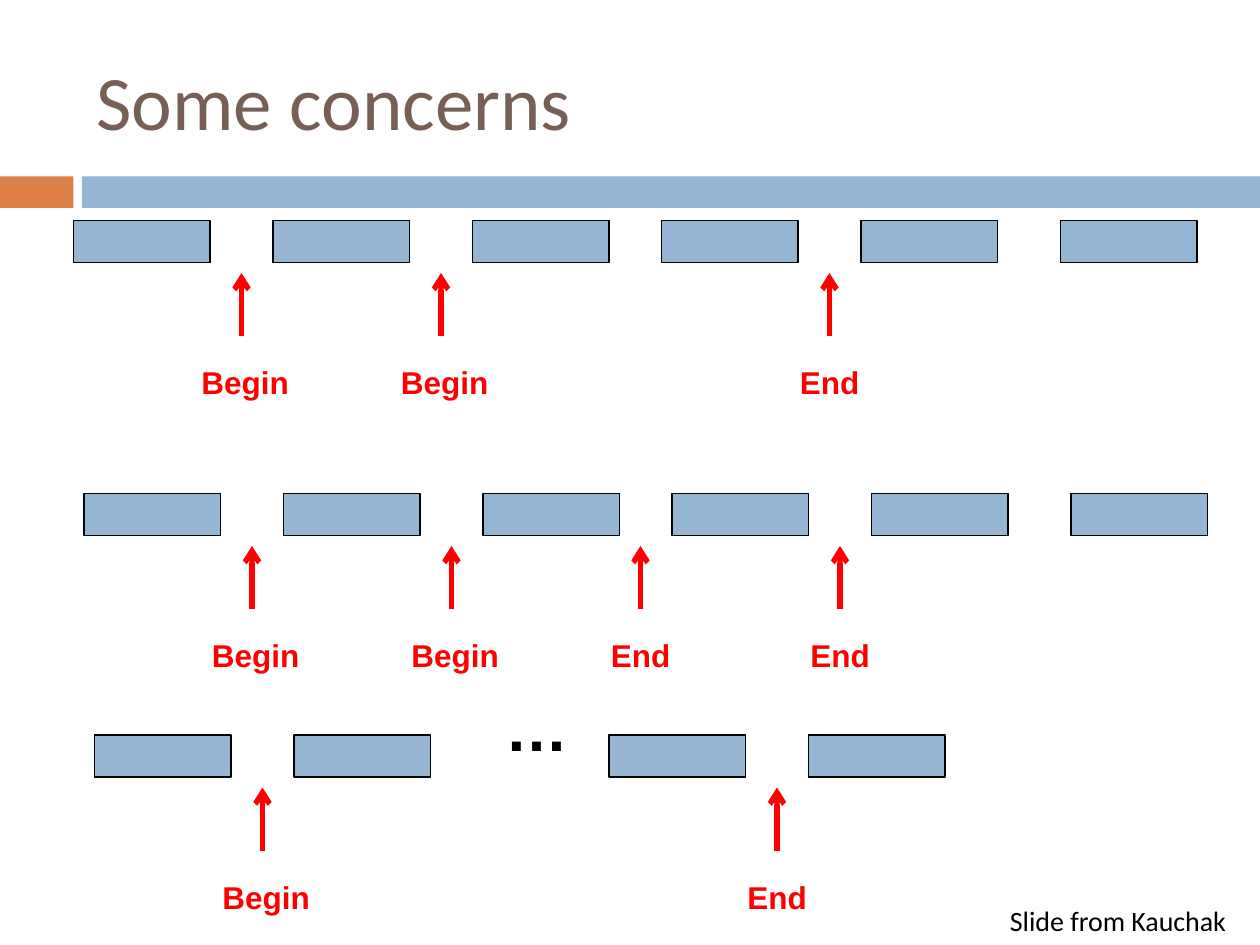
from pptx import Presentation
from pptx.dml.color import RGBColor
from pptx.enum.shapes import MSO_CONNECTOR as CONNECTOR, MSO_SHAPE as SHAPE
from pptx.enum.text import MSO_ANCHOR as ANCHOR, MSO_AUTO_SIZE as AUTO_SIZE, PP_ALIGN as ALIGN
from pptx.oxml.ns import qn
from pptx.util import Emu, Pt
from lxml.etree import SubElement

PX = 7620  # 120 px to the inch

BLUE, ORANGE, BROWN = "94B6D2", "DD8047", "775F55"
RED, BLACK = "FF0000", "000000"

BOX_WIDTH, BOX_HEIGHT = 130, 40
# Horizontal distance from the arrow to the left edge of its label
LABEL_SHIFT = {"Begin": 50, "End": 40}

# left, top, box offsets, (arrow offset, label); offsets count from the row's left
SIX_BOXES = [0, 190, 380, 560, 750, 940]
ROWS = [
    (70, 210, SIX_BOXES, [(160, "Begin"), (350, "Begin"), (720, "End")]),
    (80, 470, SIX_BOXES, [(160, "Begin"), (350, "Begin"), (530, "End"), (720, "End")]),
    (90, 700, [0, 190, 490, 680], [(160, "Begin"), (650, "End")]),
]


def px(*lengths):
    return [Emu(length * PX) for length in lengths]


def color(hex_string):
    return RGBColor.from_string(hex_string)


class SlideBuilder:
    def __init__(self, slide):
        self.slide = slide
        self.shapes = slide.shapes

    def style_text(self, frame, text, size, hex_color, font, bold=False):
        frame.text = text
        para = frame.paragraphs[0]
        para.alignment = ALIGN.LEFT
        span = para.runs[0].font
        span.name, span.size, span.bold = font, Pt(size), bold
        span.color.rgb = color(hex_color)

    def title(self, text, left, top, width, height):
        title = self.shapes.title
        title.left, title.top, title.width, title.height = px(left, top, width, height)
        frame = title.text_frame
        frame.vertical_anchor = ANCHOR.MIDDLE
        frame.auto_size = AUTO_SIZE.NONE
        self.style_text(frame, text, 44, BROWN, "Calibri")

    def box(self, left, top, width, height, fill, line=None):
        box = self.shapes.add_shape(SHAPE.RECTANGLE, *px(left, top, width, height))
        box.shadow.inherit = False
        box.fill.solid()
        box.fill.fore_color.rgb = color(fill)
        if line:
            box.line.color.rgb = color(line)
            box.line.width = Pt(0.75)
        else:
            box.line.fill.background()

    def arrow(self, x, bottom, top):
        arrow = self.shapes.add_connector(CONNECTOR.STRAIGHT, *px(x, bottom, x, top))
        arrow.line.color.rgb = color(RED)
        arrow.line.width = Pt(3)
        SubElement(arrow.line._get_or_add_ln(), qn("a:tailEnd"), type="arrow")
        SubElement(arrow._element.spPr, qn("a:effectLst"))

    def text(self, text, left, top, width, height, size, hex_color, font="Arial", bold=True):
        frame = self.shapes.add_textbox(*px(left, top, width, height)).text_frame
        frame.word_wrap = True
        frame.auto_size = AUTO_SIZE.SHAPE_TO_FIT_TEXT
        self.style_text(frame, text, size, hex_color, font, bold)

    def row(self, left, top, box_offsets, marks):
        """Draw a line of boxes with labelled arrows pointing at the gaps."""
        for offset in box_offsets:
            self.box(left + offset, top, BOX_WIDTH, BOX_HEIGHT, BLUE, BLACK)
        for offset, label in marks:
            x = left + offset
            self.arrow(x, top + 110, top + 50)
            self.text(label, x - LABEL_SHIFT[label], top + 130, 110, 48, 18, RED)


def main():
    deck = Presentation()
    deck.slide_width, deck.slide_height = px(1200, 900)
    page = SlideBuilder(deck.slides.add_slide(deck.slide_layouts[5]))

    page.title("Some concerns", 80, 30, 1070, 130)
    page.box(0, 168, 70, 30, ORANGE)
    page.box(78, 168, 1122, 30, BLUE)
    for row in ROWS:
        page.row(*row)
    page.text("…", 470, 650, 260, 85, 36, BLACK)
    page.text("Slide from Kauchak", 950, 855, 250, 44, 16, BLACK, "Calibri", bold=False)

    deck.save("out.pptx")


if __name__ == "__main__":
    main()
